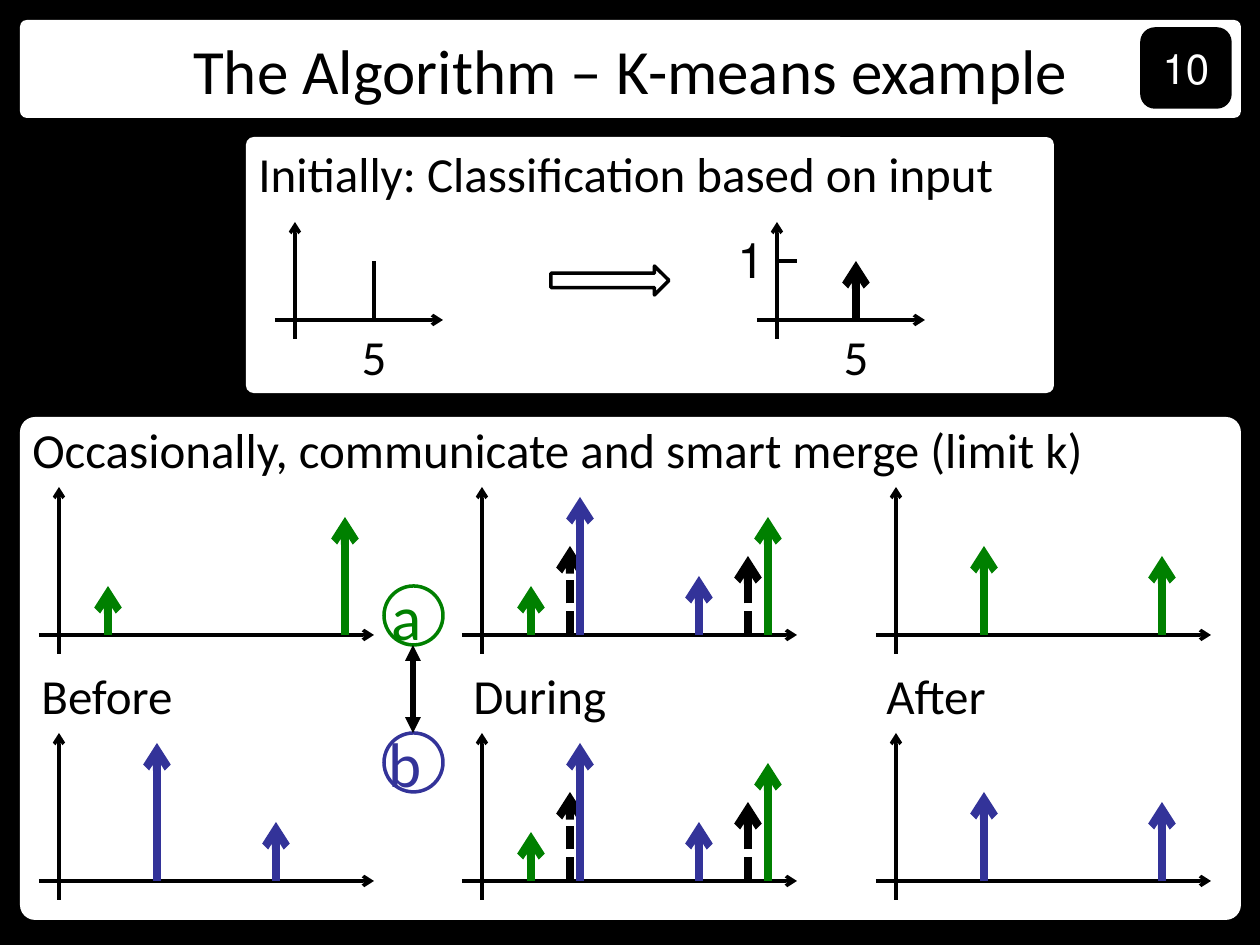
from dataclasses import dataclass

from lxml.etree import SubElement
from pptx import Presentation
from pptx.dml.color import RGBColor
from pptx.enum.dml import MSO_LINE
from pptx.enum.shapes import MSO_CONNECTOR, MSO_SHAPE
from pptx.enum.text import MSO_ANCHOR, PP_ALIGN
from pptx.oxml.ns import qn
from pptx.util import Emu, Pt


@dataclass(frozen=True)
class Theme:
    black: RGBColor = RGBColor(0, 0, 0)
    white: RGBColor = RGBColor(255, 255, 255)
    green: RGBColor = RGBColor(0, 0x80, 0)
    blue: RGBColor = RGBColor(0x33, 0x33, 0x99)
    font: str = "Calibri"
    title: int = 36
    body: int = 28
    number: int = 24
    thin: float = 2
    thick: float = 4.5


theme = Theme()
SCALE = 914400 / 126  # EMU in one px

presentation = Presentation()
presentation.slide_width = Emu(round(1260 * SCALE))
presentation.slide_height = Emu(round(945 * SCALE))
slide = presentation.slides.add_slide(presentation.slide_layouts[6])
slide.background.fill.solid()
slide.background.fill.fore_color.rgb = theme.black


def add_box(box, text="", size=theme.body, color=theme.black, kind=None, fill=None,
            line=None, radius=None, align=PP_ALIGN.LEFT, wrap=True, rtl=False):
    """Add a text box, or a preset shape when a kind is given."""
    lengths = [Emu(round(value * SCALE)) for value in box]
    if kind is None:
        shape = slide.shapes.add_textbox(*lengths)
    else:
        shape = slide.shapes.add_shape(kind, *lengths)
        shape.shadow.inherit = False
        if fill is None:
            shape.fill.background()
        else:
            shape.fill.solid()
            shape.fill.fore_color.rgb = fill
        if line is None:
            shape.line.fill.background()
        else:
            shape.line.color.rgb = line
            shape.line.width = Pt(theme.thin)
        if radius is not None:
            shape.adjustments[0] = radius
        shape.text_frame.vertical_anchor = MSO_ANCHOR.MIDDLE
    if text:
        shape.text_frame.word_wrap = wrap
        paragraph = shape.text_frame.paragraphs[0]
        paragraph.text = text
        paragraph.alignment = align
        paragraph.font.name = theme.font
        paragraph.font.size = Pt(size)
        paragraph.font.color.rgb = color
        if rtl:
            paragraph._p.get_or_add_pPr().set("rtl", "1")


def add_line(x1, y1, x2, y2, color=theme.black, width=theme.thin,
             head=None, tail="arrow", dotted=False):
    ends = [Emu(round(value * SCALE)) for value in (x1, y1, x2, y2)]
    connector = slide.shapes.add_connector(MSO_CONNECTOR.STRAIGHT, *ends)
    connector.line.color.rgb = color
    connector.line.width = Pt(width)
    if dotted:
        connector.line.dash_style = MSO_LINE.SQUARE_DOT
    outline = connector.line._get_or_add_ln()
    for tag, arrow in (("a:headEnd", head), ("a:tailEnd", tail)):
        if arrow:
            SubElement(outline, qn(tag), type=arrow)
    SubElement(connector._element.spPr, qn("a:effectLst"))


# Title and slide number
add_box((20, 20, 1221, 98), "The Algorithm – K-means example", theme.title,
        kind=MSO_SHAPE.ROUNDED_RECTANGLE, fill=theme.white, radius=0.07,
        align=PP_ALIGN.CENTER)
add_box((1142, 29, 88, 78), "10", theme.number, theme.white,
        kind=MSO_SHAPE.ROUNDED_RECTANGLE, fill=theme.black, line=theme.black,
        align=PP_ALIGN.CENTER, rtl=True)

# Upper panel: one input value becomes one weighted arrow
add_box((246, 137, 808, 256), kind=MSO_SHAPE.ROUNDED_RECTANGLE,
        fill=theme.white, radius=0.03)
add_box((246, 137, 808, 72), "Initially: Classification based on input")
for axis, stem_width, stem_tail in ((295, theme.thin, None), (777, theme.thick, "arrow")):
    add_line(axis, 339, axis, 222)
    add_line(axis - 20, 320, axis + 148, 320)
    add_line(axis + 79, 320, axis + 79, 261, width=stem_width, tail=stem_tail)
    add_box((axis + 54, 320, 50, 72), "5", align=PP_ALIGN.CENTER, wrap=False)
add_line(777, 261, 797, 261, tail=None)
add_box((727, 223, 50, 72), "1", align=PP_ALIGN.CENTER, wrap=False, rtl=True)
add_box((551, 266, 118, 29), kind=MSO_SHAPE.RIGHT_ARROW, line=theme.black)

# Lower panel
add_box((20, 417, 1221, 503), kind=MSO_SHAPE.ROUNDED_RECTANGLE,
        fill=theme.white, radius=0.03)
add_box((20, 413, 1221, 72), "Occasionally, communicate and smart merge (limit k)")

# Stems as (offset from axis, height), one set for each node and for the merge
node_a = [(49, 49), (286, 118)]
node_b = [(98, 138), (217, 59)]
merged = [(88, 89), (266, 79)]
during = [(merged, theme.black), (node_a, theme.green), (node_b, theme.blue)]
stages = [
    ("Before", 59, 29, 158, [(node_a, theme.green)], [(node_b, theme.blue)]),
    ("During", 482, 461, 160, during, during),
    ("After", 896, 874, 127, [(merged, theme.green)], [(merged, theme.blue)]),
]
for label, axis, label_left, label_width, *rows in stages:
    for baseline, stem_sets in zip((635, 881), rows):
        add_line(axis, baseline + 19, axis, baseline - 148)
        add_line(axis - 20, baseline, axis + 315, baseline)
        for stems, color in stem_sets:
            for offset, height in stems:
                add_line(axis + offset, baseline, axis + offset, baseline - height,
                         color, theme.thick, dotted=color == theme.black)
    add_box((label_left, 659, label_width, 72), label, wrap=False)

# The two communicating nodes
for name, top, color in (("a", 586, theme.green), ("b", 733, theme.blue)):
    add_box((384, top, 59, 59), name, theme.title, color, kind=MSO_SHAPE.OVAL,
            fill=theme.white, line=color, align=PP_ALIGN.CENTER, rtl=True)
add_line(413, 645, 413, 733, width=3, head="triangle", tail="triangle")

presentation.save("out.pptx")
